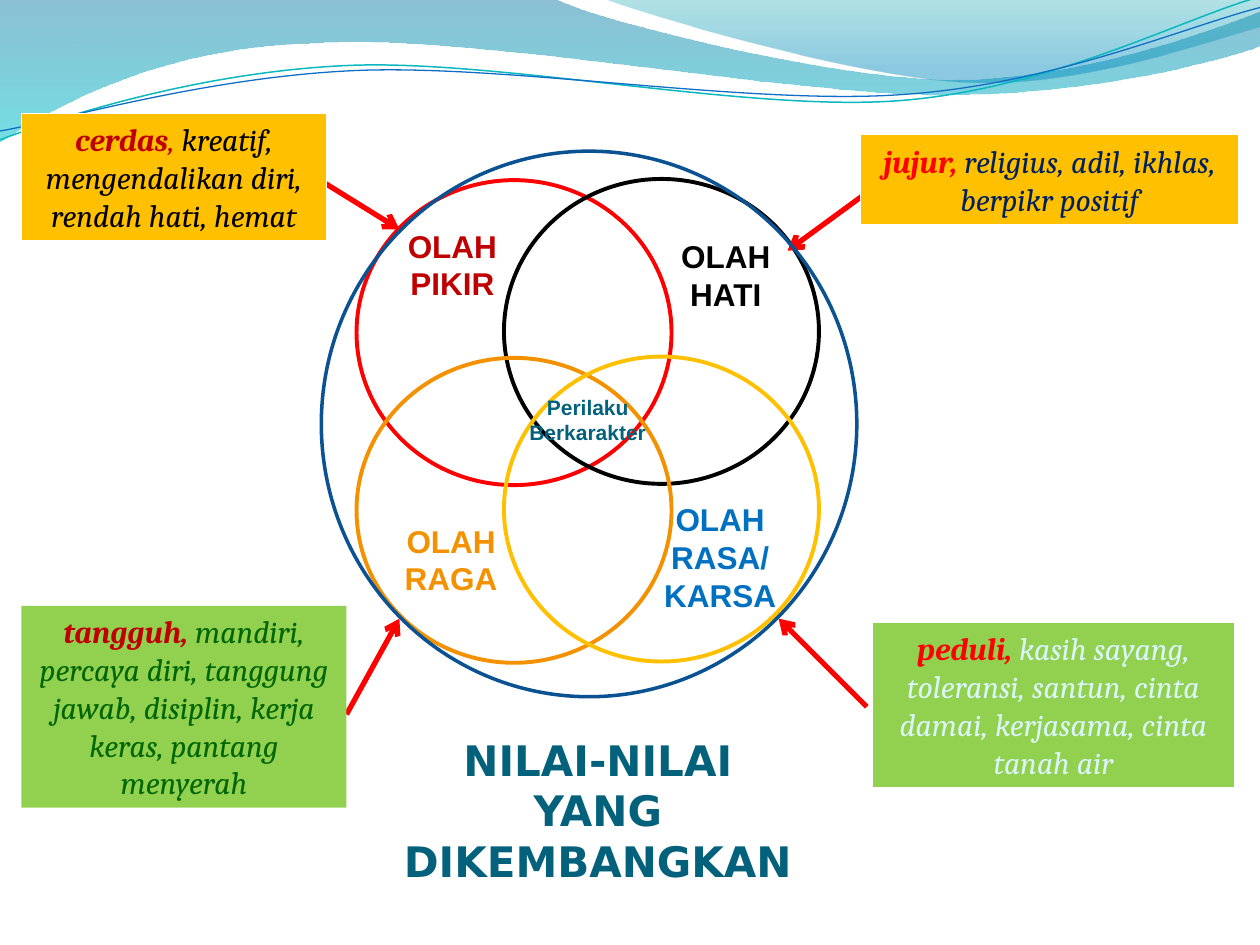
from lxml import etree
from pptx import Presentation
from pptx import util as u
from pptx.dml.color import RGBColor
from pptx.enum import shapes, text
from pptx.oxml.ns import qn

COLORS = {
    "red": "FF0000", "crimson": "C00000", "black": "000000", "white": "FFFFFF",
    "orange": "F49100", "gold": "FFC000", "blue": "0070C0", "navy": "002060",
    "green": "92D050", "forest": "006600", "ice": "DBF5F9", "teal": "04617B",
    "ring": "0B5292", "aqua": "0AB8BF", "azure": "0F6FC6",
    "wave_top": "0074A1", "wave_end": "00C6CF",
    "crest_top": "00A1A9", "crest_end": "008BBF",
}

# Header waves: a tuple of 2 numbers is a line, of 6 numbers a Bézier curve.
# Gradient stops are (position, colour, opacity in percent).
WAVES = [
    ([(0, 0), (4.4, -0.01), (4.76, 0.17, 6.64, 0.63, 7.58, 0.63),
      (8.53, 0.63, 9.58, 0.26, 10, 0.09), (10.01, 0.36),
      (9.83, 0.44, 8.7, 0.76, 7.46, 0.75), (6.22, 0.75, 3.82, 0.28, 2.57, 0.34),
      (1.29, 0.36, 0.46, 0.83, -0.01, 1.13), (0, 0)],
     [(0, "wave_top", 45), (1, "wave_end", 55)]),
    ([(4.79, -0.01), (5.09, 0.11, 6.82, 0.62, 7.69, 0.65),
      (8.56, 0.69, 9.61, 0.32, 10, 0.21), (10, 0), (4.79, -0.01)],
     [(0, "crest_top", 30), (0.8, "crest_end", 45)]),
]
RIPPLES = [
    ([(0, 1.11), (0.48, 0.93, 1.58, 0.57, 2.77, 0.52),
      (3.95, 0.47, 5.93, 0.89, 7.13, 0.8), (8.33, 0.71, 9.38, 0.15, 9.98, -0.02)],
     "aqua", 0.85),
    ([(0, 1.04), (0.47, 0.96, 1.64, 0.61, 2.83, 0.56),
      (4.03, 0.51, 5.97, 0.84, 7.17, 0.75), (8.36, 0.67, 9.41, 0.21, 10, 0.06)],
     "azure", 0.75),
]

# Boxes are (left, top, width, height)
CIRCLE_SIZE = (2.5, 2.42)
CIRCLES = [(2.83, 1.43, "red"), (4, 1.42, "black"),
           (2.83, 2.84, "orange"), (4, 2.83, "gold")]
OUTER_RING = (2.55, 1.2, 4.25, 4.33)

LABELS = [  # text, box, size, font, colour
    ("OLAH HATI", (5.25, 1.83, 1.02, 0.7), 18, "Arial", "black"),
    ("OLAH PIKIR", (3.08, 1.75, 1.02, 0.7), 18, "Arial", "crimson"),
    ("OLAH RASA/KARSA", (5.17, 3.92, 1.09, 1), 18, "Arial", "blue"),
    ("OLAH RAGA", (3.07, 4.09, 1.02, 0.7), 18, "Arial", "orange"),
]
CAPTIONS = [
    ("NILAI-NILAI YANG DIKEMBANGKAN", (3.08, 5.78, 3.33, 1.3), 24, "DejaVu Sans", "teal"),
    ("Perilaku Berkarakter", (4, 3.08, 1.33, 0.5), 12, "Arial", "teal"),
]

ARROWS = [((6.88, 5.61), (6.18, 4.91)), ((2.25, 1.25), (3.17, 1.82)),
          ((2.75, 5.67), (3.17, 4.91)), ((6.92, 1.5), (6.25, 1.99))]

CARDS = [  # box, fill, border, spans of (text, colour, bold)
    ((6.83, 1.07, 3, 0.71), "gold", "white",
     [("jujur,", "red", True),
      (" religius, adil, ikhlas, berpikr positif", "navy", False)]),
    ((6.92, 4.94, 2.88, 1.31), "green", "white",
     [("peduli, ", "red", True),
      ("kasih sayang, toleransi, santun, cinta damai, kerjasama, cinta tanah air",
       "ice", False)]),
    ((0.17, 4.81, 2.58, 1.6), "green", None,
     [("tangguh, ", "crimson", True),
      ("mandiri, percaya diri, tanggung jawab, disiplin, kerja keras, pantang menyerah",
       "forest", False)]),
    ((0.17, 0.9, 2.42, 1.01), "gold", "white",
     [("cerdas", "crimson", True), (",", "crimson", False),
      (" kreatif, mengendalikan diri, rendah hati, hemat", "black", False)]),
]


def rgb(name):
    return RGBColor.from_string(COLORS[name])


def inches(values):
    return [u.Inches(value) for value in values]


def style(shape, fill=None, line=None, width=0.75):
    shape.shadow.inherit = False
    if fill:
        shape.fill.solid()
        shape.fill.fore_color.rgb = rgb(fill)
    else:
        shape.fill.background()
    if line:
        shape.line.color.rgb = rgb(line)
        shape.line.width = u.Pt(width)
    else:
        shape.line.fill.background()


def write(shape, spans, size, font, italic=False):
    frame = shape.text_frame
    frame.word_wrap = True
    para = frame.paragraphs[0]
    para.alignment = text.PP_ALIGN.CENTER
    for words, color, bold in spans:
        span = para.add_run()
        span.text = words
        span.font.name, span.font.size = font, u.Pt(size)
        span.font.bold, span.font.italic = bold, italic
        span.font.color.rgb = rgb(color)


def bounds(segments, steps=24):
    """Left, top, right and bottom of an outline, curves included."""
    points = [segments[0]]
    for segment in segments[1:]:
        if len(segment) == 6:
            corners = [points[-1], segment[:2], segment[2:4], segment[4:]]
            for t in (step / steps for step in range(1, steps)):
                weights = ((1 - t) ** 3, 3 * t * (1 - t) ** 2, 3 * t * t * (1 - t), t ** 3)
                points.append([sum(w * c[axis] for w, c in zip(weights, corners))
                               for axis in (0, 1)])
        points.append(segment[-2:])
    xs, ys = zip(*points)
    return inches((min(xs), min(ys), max(xs), max(ys)))


def add_curve(page, segments):
    left, top, right, bottom = bounds(segments)
    builder = page.shapes.build_freeform(left, top)
    builder.add_line_segments([(right, top), (right, bottom)], close=False)
    curve = builder.convert_to_shape()
    # Swap the frame's straight lines for the real curve commands
    outline = curve.element.spPr.find(".//" + qn("a:path"))
    for command in list(outline):
        outline.remove(command)
    for index, segment in enumerate(segments):
        tag = "a:cubicBezTo" if len(segment) == 6 else "a:lnTo" if index else "a:moveTo"
        command = etree.SubElement(outline, qn(tag))
        for x, y in zip(segment[::2], segment[1::2]):
            etree.SubElement(command, qn("a:pt"), x=str(u.Inches(x) - left),
                             y=str(u.Inches(y) - top))
    if segments[0] == segments[-1]:
        etree.SubElement(outline, qn("a:close"))
    return curve


def add_wave(page, segments, stops):
    wave = add_curve(page, segments)
    style(wave)
    wave.fill.gradient()
    wave.fill.gradient_angle = 270
    for stop, (position, color, _) in zip(wave.fill.gradient_stops, stops):
        stop.position = position
        stop.color.rgb = rgb(color)
    for node, (_, _, opacity) in zip(wave.element.spPr.iter(qn("a:srgbClr")), stops):
        etree.SubElement(node, qn("a:alpha"), val=str(opacity * 1000))


def add_ring(page, box, color, width):
    ring = page.shapes.add_shape(shapes.MSO_SHAPE.OVAL, *inches(box))
    style(ring, line=color, width=width)


def add_label(page, words, box, size, font, color):
    label = page.shapes.add_textbox(*inches(box))
    write(label, [(words, color, True)], size, font)


def add_arrow(page, start, end):
    arrow = page.shapes.add_connector(shapes.MSO_CONNECTOR.STRAIGHT, *inches(start + end))
    arrow.line.color.rgb = rgb("red")
    arrow.line.width = u.Pt(3)
    properties = arrow.element.spPr
    etree.SubElement(properties.find(qn("a:ln")), qn("a:tailEnd"), type="arrow")
    etree.SubElement(properties, qn("a:effectLst"))


deck = Presentation()
deck.slide_width, deck.slide_height = inches((10, 7.5))
page = deck.slides.add_slide(deck.slide_layouts[6])

# Header waves
for segments, stops in WAVES:
    add_wave(page, segments, stops)
for segments, color, width in RIPPLES:
    style(add_curve(page, segments), line=color, width=width)

# Overlapping circles and their labels
for left, top, color in CIRCLES:
    add_ring(page, (left, top) + CIRCLE_SIZE, color, 2.25)
for label in LABELS:
    add_label(page, *label)

# Arrows and value cards
for start, end in ARROWS:
    add_arrow(page, start, end)
for box, fill, border, spans in CARDS:
    card = page.shapes.add_shape(shapes.MSO_SHAPE.RECTANGLE, *inches(box))
    style(card, fill, border)
    write(card, spans, 18, "Cambria", italic=True)

# Title, centre caption and outer ring
for caption in CAPTIONS:
    add_label(page, *caption)
add_ring(page, OUTER_RING, "ring", 2)

deck.save("out.pptx")
